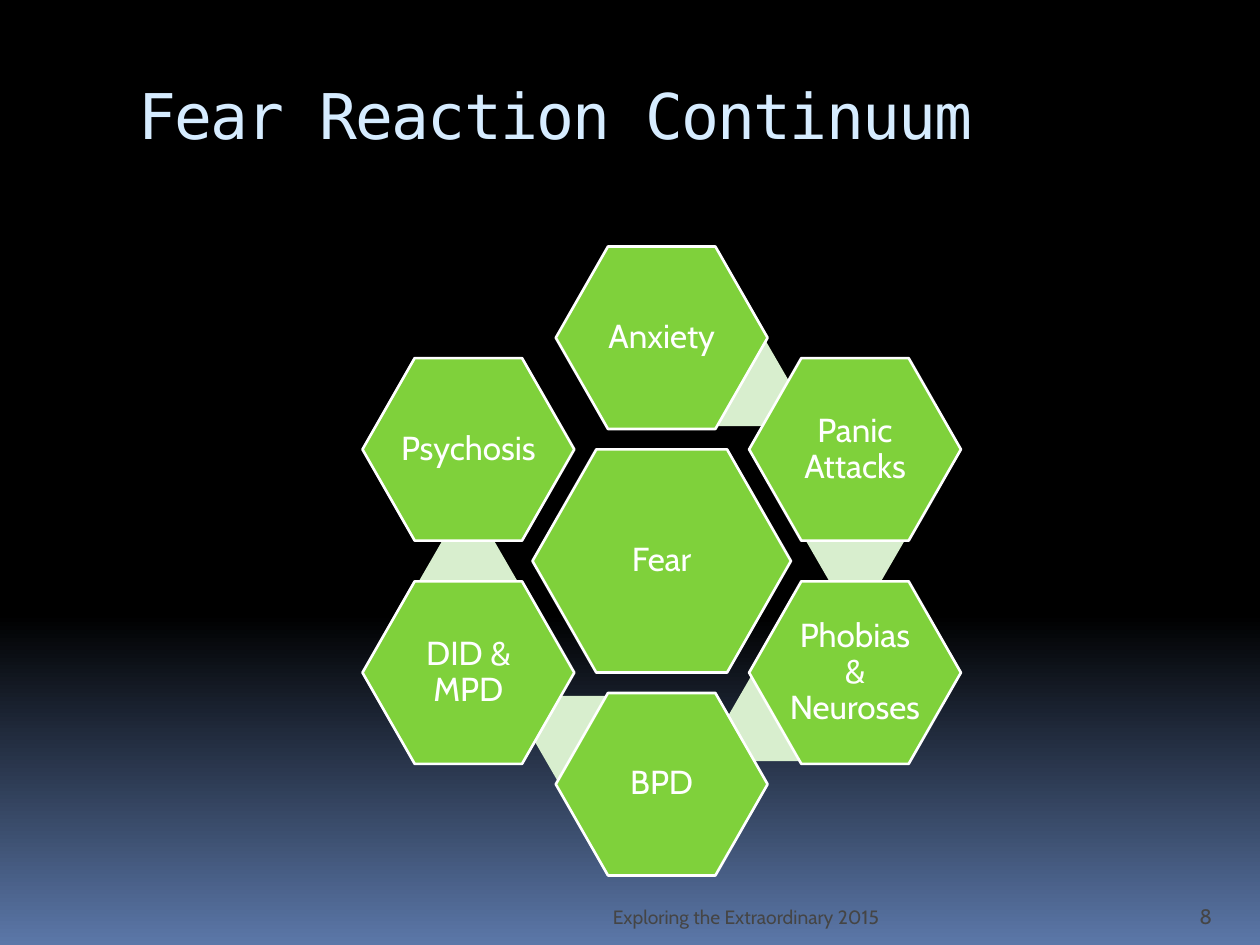
from dataclasses import dataclass
from math import cos, radians, sin

from pptx import Presentation
from pptx.dml.color import RGBColor
from pptx.enum.shapes import MSO_SHAPE
from pptx.enum.text import MSO_ANCHOR, PP_ALIGN
from pptx.util import Cm, Pt

BODY_FONT, TITLE_FONT = "Cabin", "DejaVu Sans Mono"
GREEN, PALE_GREEN, WHITE, GREY = "7FD13B", "D8EECE", "FFFFFF", "454545"
CENTER_X, CENTER_Y = 13.34, 11.31
STEP = 60
TILE_RADIUS = 4.5
LINK_RADIUS, LINK_OFFSET = 3.92, 24.4


@dataclass(frozen=True)
class HexStyle:
    width: float
    height: float
    adj: float
    fill: str
    outline: str | None = None


@dataclass(frozen=True)
class Label:
    text: str
    left: float
    top: float
    width: float
    height: float
    size: float
    color: str
    font: str = BODY_FONT
    align: PP_ALIGN = PP_ALIGN.LEFT
    anchor: MSO_ANCHOR = MSO_ANCHOR.BOTTOM
    spacing: int = 0  # hundredths of a point between letters


CORE = HexStyle(5.21, 4.5, 0.286, GREEN, WHITE)
TILE = HexStyle(4.27, 3.68, 0.286, GREEN, WHITE)
LINK = HexStyle(1.96, 1.7, 0.289, PALE_GREEN)

REACTIONS = ["Anxiety", "Panic Attacks", "Phobias & Neuroses", "BPD", "DID & MPD", "Psychosis"]

LABELS = [
    Label("Fear Reaction Continuum", 2.54, 1.42, 21.59, 2.54, 36, "D6ECFF",
          font=TITLE_FONT, anchor=MSO_ANCHOR.TOP, spacing=-100),
    Label("Exploring the Extraordinary 2015", 2.54, 17.83, 15.44, 1.02, 11, GREY,
          align=PP_ALIGN.RIGHT),
    Label("8", 23.93, 17.83, 1.27, 1.02, 12, GREY),
]


def rgb(value: str) -> RGBColor:
    return RGBColor.from_string(value)


def set_text(tf, text: str, size: float, color: str, font: str, align: PP_ALIGN):
    """Fill the frame with one paragraph; a single word never wraps."""
    tf.text = text
    tf.word_wrap = " " in text
    p = tf.paragraphs[0]
    p.alignment = align
    r = p.runs[0]
    r.font.size = Pt(size)
    r.font.name = font
    r.font.color.rgb = rgb(color)
    return p


def add_label(s, label: Label) -> None:
    sp = s.shapes.add_textbox(Cm(label.left), Cm(label.top), Cm(label.width), Cm(label.height))
    tf = sp.text_frame
    tf.vertical_anchor = label.anchor
    p = set_text(tf, label.text, label.size, label.color, label.font, label.align)
    if label.spacing:
        p.runs[0].font._element.set("spc", str(label.spacing))


def add_hexagon(s, style: HexStyle, radius: float = 0, angle: float = 0, text: str = "") -> None:
    """Place a hexagon around the centre, with angle clockwise from the top."""
    x = CENTER_X + radius * sin(radians(angle))
    y = CENTER_Y - radius * cos(radians(angle))
    sp = s.shapes.add_shape(MSO_SHAPE.HEXAGON, Cm(x - style.width / 2), Cm(y - style.height / 2),
                            Cm(style.width), Cm(style.height))
    sp.adjustments[0] = style.adj
    sp.shadow.inherit = False
    sp.fill.solid()
    sp.fill.fore_color.rgb = rgb(style.fill)
    if style.outline:
        sp.line.color.rgb = rgb(style.outline)
        sp.line.width = Pt(1.5)
    else:
        sp.line.fill.background()
    if text:
        tf = sp.text_frame
        tf.margin_left = tf.margin_right = tf.margin_top = tf.margin_bottom = Cm(0.08)
        tf.vertical_anchor = MSO_ANCHOR.MIDDLE
        p = set_text(tf, text, 19, WHITE, BODY_FONT, PP_ALIGN.CENTER)
        p.line_spacing = 0.9


def set_background(s) -> None:
    fill = s.background.fill
    fill.gradient()
    fill.gradient_angle = 270
    for stop, (position, color) in zip(fill.gradient_stops, [(0.65, "000000"), (1, "5B77A8")]):
        stop.position = position
        stop.color.rgb = rgb(color)


def main() -> None:
    prs = Presentation()
    prs.slide_width, prs.slide_height = Cm(25.4), Cm(19.05)
    s = prs.slides.add_slide(prs.slide_layouts[6])
    set_background(s)
    for label in LABELS:
        add_label(s, label)
    add_hexagon(s, CORE, text="Fear")
    for i in range(len(REACTIONS) - 1):
        add_hexagon(s, LINK, LINK_RADIUS, i * STEP + LINK_OFFSET)
    for i, reaction in enumerate(REACTIONS):
        add_hexagon(s, TILE, TILE_RADIUS, i * STEP, reaction)
    prs.save("out.pptx")


if __name__ == "__main__":
    main()
